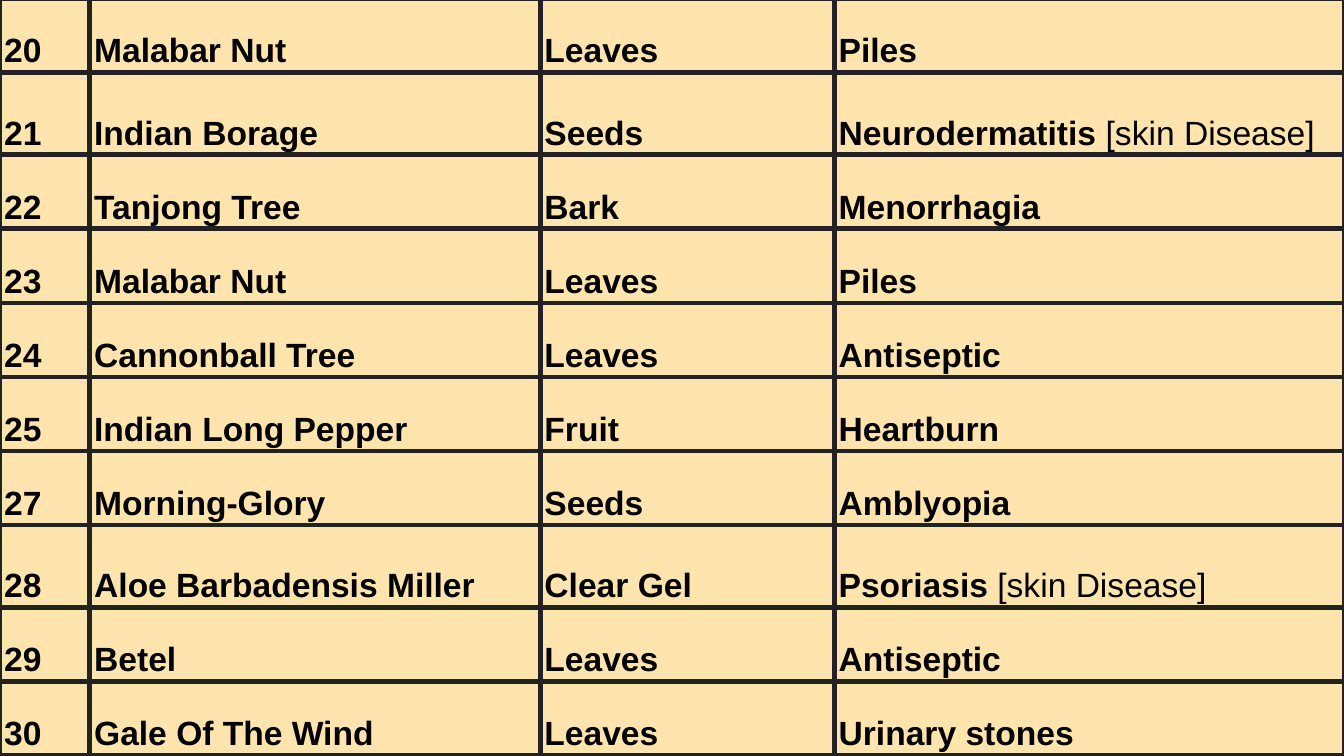
from lxml.etree import SubElement
from pptx import Presentation
from pptx.dml.color import RGBColor
from pptx.enum.text import MSO_ANCHOR
from pptx.oxml.ns import qn
from pptx.util import Cm, Pt

BACKGROUND, INK, GRID = "FFE4AE", "000000", "222222"
COLUMN_WIDTHS = [1.7, 8.51, 5.56, 9.63]
ROW_HEIGHT, NOTED_ROW_HEIGHT = 1.4, 1.56
CELL_FORMAT = {
    "margin_left": Cm(0.08),
    "margin_right": Cm(0.08),
    "margin_top": Cm(0.05),
    "margin_bottom": Cm(0.05),
    "vertical_anchor": MSO_ANCHOR.BOTTOM,
}
FONT_FORMAT = {"name": "Arial", "size": Pt(18)}
TABLE_FORMAT = {"first_row": False, "horz_banding": False}
SKIN = "[skin Disease]"
REMEDIES = [
    ("20", "Malabar Nut", "Leaves", "Piles"),
    ("21", "Indian Borage", "Seeds", "Neurodermatitis", SKIN),
    ("22", "Tanjong Tree", "Bark", "Menorrhagia"),
    ("23", "Malabar Nut", "Leaves", "Piles"),
    ("24", "Cannonball Tree", "Leaves", "Antiseptic"),
    ("25", "Indian Long Pepper", "Fruit", "Heartburn"),
    ("27", "Morning-Glory", "Seeds", "Amblyopia"),
    ("28", "Aloe Barbadensis Miller", "Clear Gel", "Psoriasis", SKIN),
    ("29", "Betel", "Leaves", "Antiseptic"),
    ("30", "Gale Of The Wind", "Leaves", "Urinary stones"),
]


def color(hex_code):
    """Return the RGB colour for a hex string."""
    return RGBColor.from_string(hex_code)


def apply_format(target, values):
    """Set every attribute named in a dict of format values."""
    for attribute, value in values.items():
        setattr(target, attribute, value)


def border_cell(cell, hex_code, width):
    """Draw a solid line on all four sides of a cell."""
    properties = cell._tc.get_or_add_tcPr()
    for side in ("a:lnL", "a:lnR", "a:lnT", "a:lnB"):
        line = SubElement(properties, qn(side), w=str(width))
        fill = SubElement(line, qn("a:solidFill"))
        SubElement(fill, qn("a:srgbClr"), val=hex_code)


def add_run(paragraph, words, bold):
    """Append words to a paragraph in the table's font."""
    run = paragraph.add_run()
    run.text = words
    apply_format(run.font, {**FONT_FORMAT, "bold": bold})
    run.font.color.rgb = color(INK)


def fill_cell(cell, words, note=""):
    """Write bold words, with an optional plain note, in a bordered cell."""
    apply_format(cell, CELL_FORMAT)
    border_cell(cell, GRID, Pt(3))
    cell.fill.background()
    paragraph = cell.text_frame.paragraphs[0]
    paragraph.line_spacing = 1.15
    add_run(paragraph, f"{words} " if note else words, True)
    if note:
        add_run(paragraph, note, False)


def add_remedy_table(slide, left, top, width, height):
    """Place the table of plants, parts used and ailments in a box."""
    frame = slide.shapes.add_table(
        len(REMEDIES), len(COLUMN_WIDTHS), left, top, width, height)
    table = frame.table
    apply_format(table, TABLE_FORMAT)
    for column, share in zip(table.columns, COLUMN_WIDTHS):
        column.width = int(width * share / sum(COLUMN_WIDTHS))
    for row, (number, plant, part, ailment, *note) in zip(table.rows, REMEDIES):
        row.height = Cm(NOTED_ROW_HEIGHT if note else ROW_HEIGHT)
        for cell, words in zip(row.cells, (number, plant, part)):
            fill_cell(cell, words)
        fill_cell(row.cells[3], ailment, *note)


def main():
    """Build the slide and save it."""
    presentation = Presentation()
    presentation.slide_width, presentation.slide_height = Cm(25.4), Cm(14.29)
    slide = presentation.slides.add_slide(presentation.slide_layouts[6])
    slide.background.fill.solid()
    slide.background.fill.fore_color.rgb = color(BACKGROUND)
    add_remedy_table(slide, Cm(0), Cm(-0.03), Cm(25.4), Cm(14.32))
    presentation.save("out.pptx")


if __name__ == "__main__":
    main()
